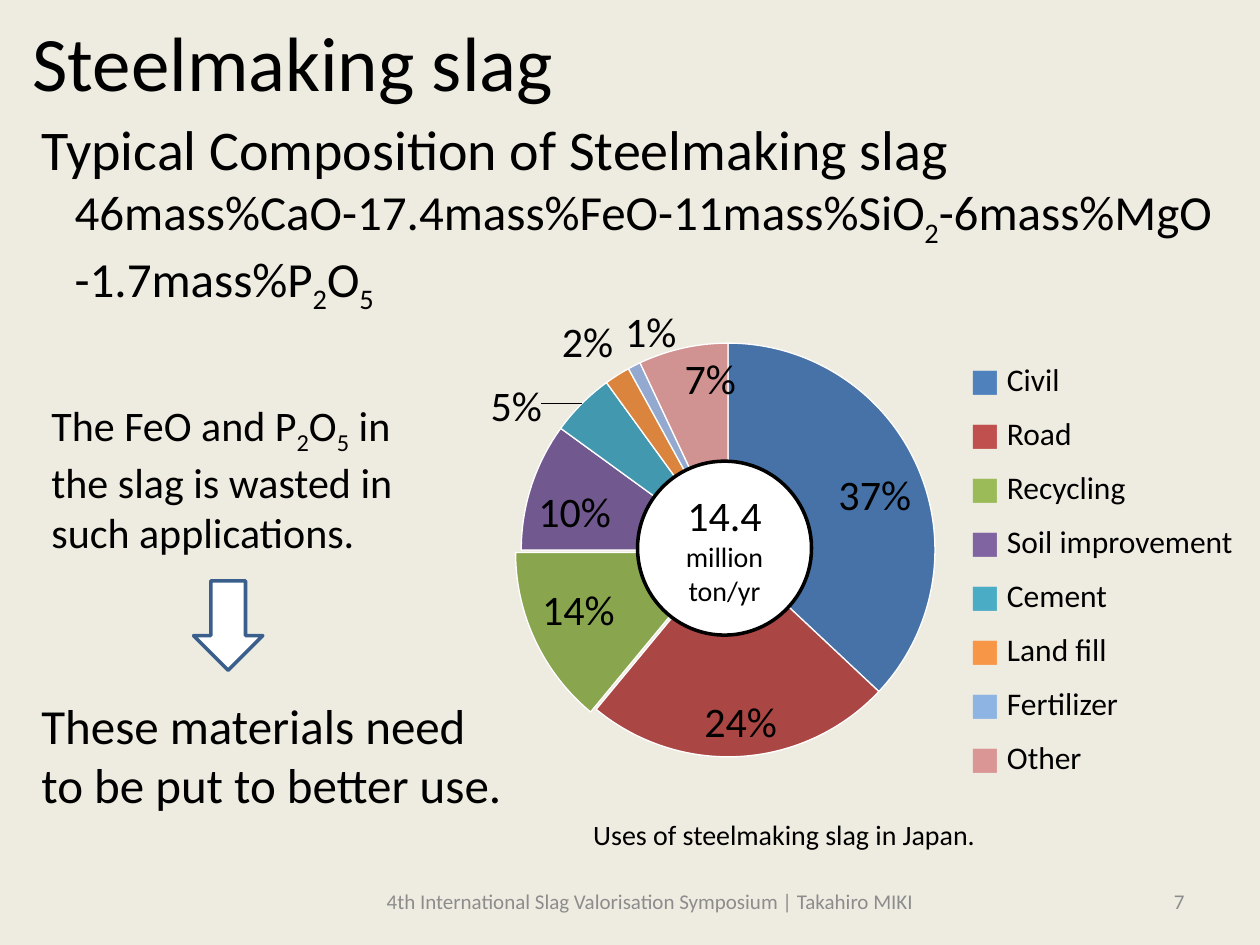
from pptx import Presentation
from pptx.chart.data import CategoryChartData
from pptx.dml.color import RGBColor
from pptx.enum.chart import XL_CHART_TYPE, XL_LABEL_POSITION
from pptx.enum.shapes import MSO_SHAPE
from pptx.enum.text import MSO_ANCHOR, PP_ALIGN
from pptx.oxml import parse_xml
from pptx.util import Pt

PIE = XL_CHART_TYPE.PIE
INSIDE = XL_LABEL_POSITION.INSIDE_END
BEST_FIT = XL_LABEL_POSITION.BEST_FIT
ELLIPSE, DOWN_ARROW = MSO_SHAPE.OVAL, MSO_SHAPE.DOWN_ARROW
TOP, MIDDLE = MSO_ANCHOR.TOP, MSO_ANCHOR.MIDDLE
LEFT, CENTER, RIGHT = PP_ALIGN.LEFT, PP_ALIGN.CENTER, PP_ALIGN.RIGHT

BLACK, WHITE, GREY = "000000", "FFFFFF", "8C8C8C"
CHART_NS = "http://schemas.openxmlformats.org/drawingml/2006/chart"

# name, share, legend colour, slice colour, label position
USES = [
    ("Civil", 37, "4F81BD", "4672A8", INSIDE),
    ("Road", 24, "C0504D", "AA4643", INSIDE),
    ("Recycling", 14, "9BBB59", "89A54E", INSIDE),
    ("Soil improvement", 10, "8064A2", "71588F", INSIDE),
    ("Cement", 5, "4BACC6", "4198AF", BEST_FIT),
    ("Land fill", 2, "F79646", "DB843D", BEST_FIT),
    ("Fertilizer", 1, "8EB4E3", "93A9CF", BEST_FIT),
    ("Other", 7, "D99694", "D19392", INSIDE),
]
EXPLODED_SLICE = 2


def color(value):
    return RGBColor.from_string(value)


class SlideBuilder:
    def __init__(self, slide, font="Calibri"):
        self.slide = slide
        self.font = font

    def background(self, fill):
        self.slide.background.fill.solid()
        self.slide.background.fill.fore_color.rgb = color(fill)

    def run(self, paragraph, text, size, text_color=BLACK):
        run = paragraph.add_run()
        run.text = text
        run.font.name = self.font
        run.font.size = Pt(size)
        run.font.color.rgb = color(text_color)
        return run

    def formula(self, paragraph, text, size, text_color=BLACK):
        """Write text in which every part between underscores is a subscript."""
        for index, part in enumerate(text.split("_")):
            if part:
                run = self.run(paragraph, part, size, text_color)
                if index % 2:
                    run.font._element.set("baseline", "-25000")

    def text(self, box, lines, text_color=BLACK, align=LEFT, anchor=TOP, wrap=True):
        """Add a text box; each line is (text, size, indent)."""
        frame = self.slide.shapes.add_textbox(*map(Pt, box)).text_frame
        frame.word_wrap = wrap
        frame.vertical_anchor = anchor
        for index, (text, size, indent) in enumerate(lines):
            paragraph = frame.add_paragraph() if index else frame.paragraphs[0]
            paragraph.alignment = align
            if indent:
                paragraph._p.get_or_add_pPr().set("marL", str(Pt(indent)))
            self.formula(paragraph, text, size, text_color)
        return frame

    def legend_entry(self, box, name, marker_color):
        frame = self.text(box, [("■ ", 18, 0)], marker_color, wrap=False)
        self.run(frame.paragraphs[0], name, 18)

    def shape(self, kind, box, fill, line, width):
        shape = self.slide.shapes.add_shape(kind, *map(Pt, box))
        shape.shadow.inherit = False
        shape.fill.solid()
        shape.fill.fore_color.rgb = color(fill)
        shape.line.color.rgb = color(line)
        shape.line.width = Pt(width)
        return shape

    def pie(self, box, uses, plot_area):
        """Add the pie; plot_area holds x, y, w, h as fractions of the chart."""
        data = CategoryChartData(number_format="#,##0")
        data.categories = [str(number) for number in range(1, len(uses) + 1)]
        data.add_series("Series 1", [use[1] for use in uses])
        chart = self.slide.shapes.add_chart(PIE, *map(Pt, box), data).chart
        chart.has_legend = chart.has_title = False
        chart.font.name = self.font
        chart.font.size = Pt(10)
        chart.font.color.rgb = color(BLACK)

        plot = chart.plots[0]
        plot.vary_by_categories = True
        series = plot.series[0]
        labels = series.data_labels
        labels.show_percentage = True
        labels.show_value = False
        labels.font.size = Pt(24)
        labels.font.color.rgb = color(BLACK)
        for index, (_, _, _, fill, position) in enumerate(uses):
            point = series.points[index]
            point.format.fill.solid()
            point.format.fill.fore_color.rgb = color(fill)
            point.format.line.color.rgb = color(WHITE)
            point.format.line.width = Pt(0.75)
            label = point.data_label
            label.font.size = Pt(24)
            label.font.color.rgb = color(BLACK)
            label.position = position
        for element in series._element.iter(f"{{{CHART_NS}}}dLbl"):
            element.find(f"{{{CHART_NS}}}showVal").set("val", "0")
            element.find(f"{{{CHART_NS}}}showPercent").set("val", "1")

        exploded = series._element.findall(f"{{{CHART_NS}}}dPt")[EXPLODED_SLICE]
        explosion = parse_xml(f'<c:explosion xmlns:c="{CHART_NS}" val="3"/>')
        exploded.find(f"{{{CHART_NS}}}spPr").addprevious(explosion)

        area = chart._chartSpace.chart.plotArea
        for old in area.findall(f"{{{CHART_NS}}}layout"):
            area.remove(old)
        sizes = "".join(f'<c:{key} val="{value}"/>' for key, value in zip("xywh", plot_area))
        area.insert(0, parse_xml(
            f'<c:layout xmlns:c="{CHART_NS}"><c:manualLayout>'
            '<c:layoutTarget val="inner"/><c:xMode val="edge"/><c:yMode val="edge"/>'
            f"{sizes}</c:manualLayout></c:layout>"))


def main():
    presentation = Presentation()
    presentation.slide_width = Pt(720)
    presentation.slide_height = Pt(540)
    slide = presentation.slides.add_slide(presentation.slide_layouts[6])
    builder = SlideBuilder(slide)
    builder.background("EEECE1")

    legend_top, legend_pitch = 202.3, 30.86
    for index, (name, _, marker_color, _, _) in enumerate(USES):
        box = (547.2, legend_top + index * legend_pitch, 168, 29)
        builder.legend_entry(box, name, marker_color)
    builder.text((331.9, 463.7, 245.5, 26.6),
                 [("Uses of steelmaking slag in Japan.", 16, 0)], wrap=False)

    builder.pie((247, 129.6, 334.8, 369.4), USES, (0.15, 0.18, 0.71, 0.64))
    total = builder.shape(ELLIPSE, (364.3, 263.5, 99.4, 99.4), WHITE, BLACK, 2)
    total.text_frame.word_wrap = True
    total.text_frame.vertical_anchor = MIDDLE
    paragraph = total.text_frame.paragraphs[0]
    paragraph.alignment = CENTER
    builder.run(paragraph, "14.4", 24)
    builder.run(paragraph, " million ton/yr", 16)

    builder.text((11.5, 5, 452, 60.5), [("Steelmaking slag", 44, 0)])
    builder.shape(DOWN_ARROW, (110.6, 331.9, 39.6, 51.1), WHITE, "3A5F8C", 2)
    builder.text((22.3, 224.6, 232.6, 94.3), [
        ("The FeO and P_2_O_5_ in the slag is wasted in such applications.", 24, 0)])
    builder.text((16.6, 393.8, 283.7, 74.9),
                 [("These materials need to be put to better use.", 28, 0)])
    builder.text((16.6, 61.9, 720, 113.8), [
        ("Typical Composition of Steelmaking slag", 32, 0),
        ("46mass%CaO-17.4mass%FeO-11mass%SiO_2_-6mass%MgO", 28, 19),
        ("-1.7mass%P_2_O_5_", 28, 19)])

    builder.text((516.2, 500.4, 167.8, 28.8), [("7", 12, 0)], GREY, RIGHT, MIDDLE)
    builder.text((163.4, 500.4, 416.2, 28.8),
                 [("4th International Slag Valorisation Symposium | Takahiro MIKI", 12, 0)],
                 GREY, CENTER, MIDDLE)
    presentation.save("out.pptx")


if __name__ == "__main__":
    main()
